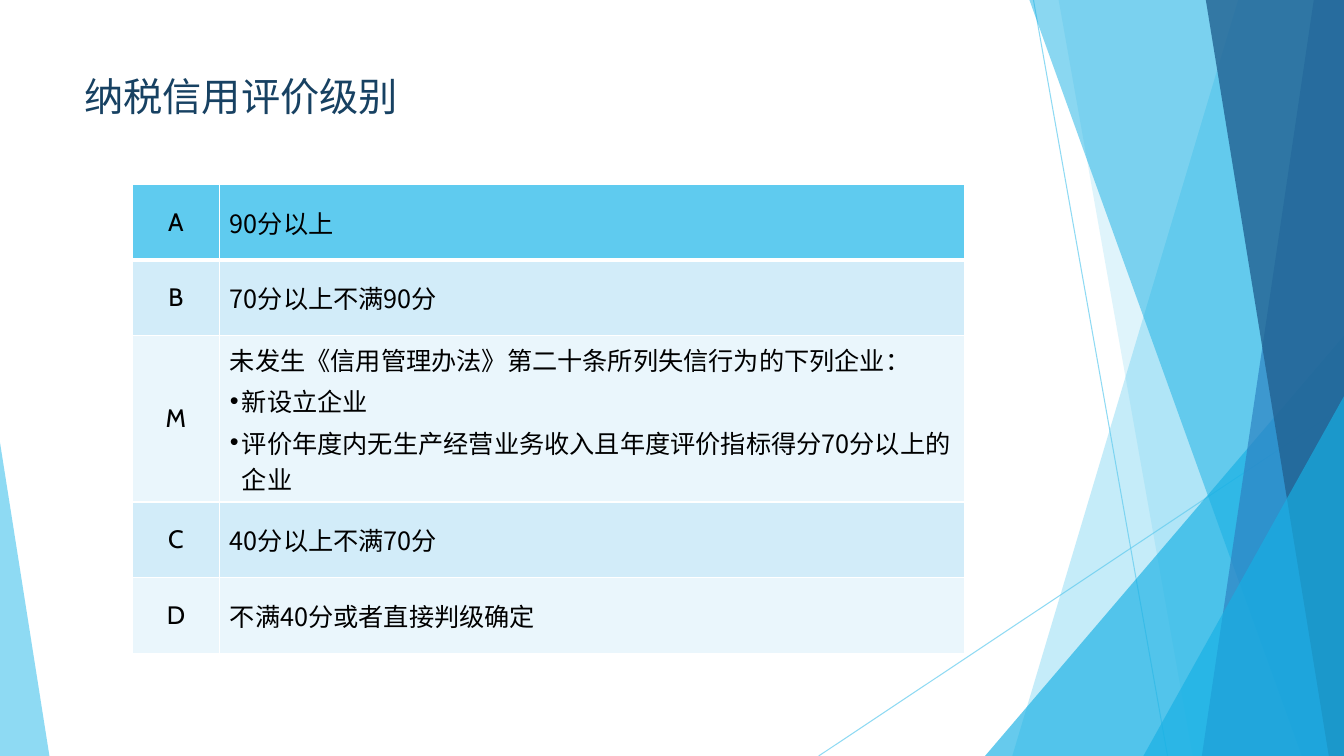
"""Build a slide that lists the tax credit rating levels."""
import pptx
import pptx.dml.color
import pptx.enum.shapes
import pptx.enum.text
import pptx.oxml.ns
import pptx.util
from lxml import etree

Inches = pptx.util.Inches
Pt = pptx.util.Pt
RGBColor = pptx.dml.color.RGBColor
qn = pptx.oxml.ns.qn

WIDTH, HEIGHT = 13.33, 7.5
SKY = RGBColor(0x5F, 0xCB, 0xEF)
CYAN = RGBColor(0x17, 0xB0, 0xE4)
BLUE = RGBColor(0x2E, 0x83, 0xC3)
NAVY = RGBColor(0x22, 0x62, 0x92)
TITLE = RGBColor(0x17, 0x41, 0x62)
BAND_DARK = RGBColor(0xD2, 0xEC, 0xF9)
BAND_LIGHT = RGBColor(0xEA, 0xF6, 0xFC)
BLACK = RGBColor(0, 0, 0)
WHITE = RGBColor(0xFF, 0xFF, 0xFF)
LATIN, CJK = "Cabin", "Noto Sans CJK SC"

LEVELS = [
    ("A", ["90分以上"]),
    ("B", ["70分以上不满90分"]),
    ("M", ["未发生《信用管理办法》第二十条所列失信行为的下列企业：",
           "新设立企业",
           "评价年度内无生产经营业务收入且年度评价指标得分70分以上的企业"]),
    ("C", ["40分以上不满70分"]),
    ("D", ["不满40分或者直接判级确定"]),
]


def set_alpha(shape, percent):
    """Make the colour of a shape or line partly transparent."""
    for color in shape.element.spPr.iter(qn("a:srgbClr")):
        etree.SubElement(color, qn("a:alpha"), val=str(percent * 1000))


def paint(shape, color, alpha):
    """Fill a shape without outline or shadow."""
    shape.shadow.inherit = False
    shape.fill.solid()
    shape.fill.fore_color.rgb = color
    shape.line.fill.background()
    set_alpha(shape, alpha)


def add_ray(slide, x1, y1, x2, y2):
    """Draw one thin decorative line."""
    line = slide.shapes.add_connector(
        pptx.enum.shapes.MSO_CONNECTOR.STRAIGHT,
        Inches(x1), Inches(y1), Inches(x2), Inches(y2))
    line.line.color.rgb = SKY
    line.line.width = Pt(0.75)
    set_alpha(line, 70)
    etree.SubElement(line.element.spPr, qn("a:effectLst"))


def add_panel(slide, top_x, bottom_x, color, alpha):
    """Draw a panel from a slanted left edge to the right slide edge."""
    builder = slide.shapes.build_freeform(Inches(top_x), 0)
    corners = [(WIDTH, 0), (WIDTH, HEIGHT), (bottom_x, HEIGHT)]
    builder.add_line_segments([(Inches(x), Inches(y)) for x, y in corners])
    paint(builder.convert_to_shape(), color, alpha)


def add_corner(slide, x, y, width, apex, color, alpha):
    """Draw a triangle that stands on the bottom slide edge."""
    s = slide.shapes.add_shape(
        pptx.enum.shapes.MSO_SHAPE.ISOSCELES_TRIANGLE,
        Inches(x), Inches(y), Inches(width), Inches(HEIGHT - y))
    s.adjustments[0] = apex
    paint(s, color, alpha)


def style_paragraph(p, size, font, color):
    """Set size, colour and fonts of all runs in a paragraph."""
    for r in p.runs:
        r.font.size = Pt(size)
        r.font.name = font
        r.font.color.rgb = color
        etree.SubElement(r.font._element, qn("a:ea"), typeface=CJK)


def add_title(slide, text):
    """Add the slide title."""
    tf = slide.shapes.add_textbox(
        Inches(0.74), Inches(0.67), Inches(9.4), Inches(1.44)).text_frame
    tf.word_wrap = True
    tf.text = text
    style_paragraph(tf.paragraphs[0], 28, LATIN, TITLE)


def add_bullet(p):
    """Give a paragraph a hanging bullet."""
    ppr = p._p.get_or_add_pPr()
    ppr.set("marL", str(Inches(0.12)))
    ppr.set("indent", str(-Inches(0.12)))
    etree.SubElement(ppr, qn("a:buFont"), typeface="Arial")
    etree.SubElement(ppr, qn("a:buChar"), char="•")


def set_borders(cell, top, bottom):
    """Draw white cell borders with the given top and bottom widths."""
    tcpr = cell._tc.get_or_add_tcPr()
    sides = [("L", 1), ("R", 1), ("T", top), ("B", bottom)]
    for i, (side, width) in enumerate(sides):
        ln = etree.Element(qn(f"a:ln{side}"), w=str(Pt(width)))
        fill = etree.SubElement(ln, qn("a:solidFill"))
        etree.SubElement(fill, qn("a:srgbClr"), val=str(WHITE))
        tcpr.insert(i, ln)


def fill_cell(cell, lines, font, row):
    """Write one table cell and format it for its row."""
    cell.fill.solid()
    cell.fill.fore_color.rgb = SKY if row == 0 else (BAND_LIGHT, BAND_DARK)[row % 2]
    cell.vertical_anchor = pptx.enum.text.MSO_ANCHOR.MIDDLE
    set_borders(cell, 3 if row == 1 else 1, 3 if row == 0 else 1)
    cell.text_frame.text = "\n".join(lines)
    for i, p in enumerate(cell.text_frame.paragraphs):
        style_paragraph(p, 18, font, BLACK)
        if len(lines) > 1:
            p.space_after = Pt(3.6)
        if i > 0:
            add_bullet(p)


def add_levels(slide):
    """Add the table of rating levels."""
    table = slide.shapes.add_table(
        len(LEVELS), 2, Inches(1.31), Inches(1.83), Inches(8.26), Inches(4.65)).table
    table.first_row = False
    table.horz_banding = False
    for column, width in zip(table.columns, (0.87, 7.39)):
        column.width = Inches(width)
    for row, (level, lines) in enumerate(LEVELS):
        table.rows[row].height = Inches(1.65 if len(lines) > 1 else 0.75)
        fill_cell(table.cell(row, 0), [level], LATIN, row)
        fill_cell(table.cell(row, 1), lines, CJK, row)
        p = table.cell(row, 0).text_frame.paragraphs[0]
        p.alignment = pptx.enum.text.PP_ALIGN.CENTER


def add_backdrop(slide):
    """Draw the translucent facets at both slide edges."""
    add_ray(slide, 10.25, 0, 11.58, HEIGHT)
    add_ray(slide, WIDTH, 4.03, 8.12, HEIGHT)
    add_panel(slide, 12.28, 10.04, SKY, 36)
    add_panel(slide, 10.5, 11.83, SKY, 20)
    add_corner(slide, 9.77, 3.33, 3.56, 1, CYAN, 66)
    add_panel(slide, 10.21, 12.91, CYAN, 50)
    add_panel(slide, 13.03, 11.92, BLUE, 70)
    add_panel(slide, 11.96, 13.18, NAVY, 80)
    add_corner(slide, 11.34, 3.93, 1.99, 1, CYAN, 66)
    add_corner(slide, 0, 4.39, 0.49, 0, SKY, 70)


def main():
    """Build and save the presentation."""
    prs = pptx.Presentation()
    prs.slide_width = Inches(WIDTH)
    prs.slide_height = Inches(HEIGHT)
    slide = prs.slides.add_slide(prs.slide_layouts[6])
    add_backdrop(slide)
    add_title(slide, "纳税信用评价级别")
    add_levels(slide)
    prs.save("out.pptx")


if __name__ == "__main__":
    main()
